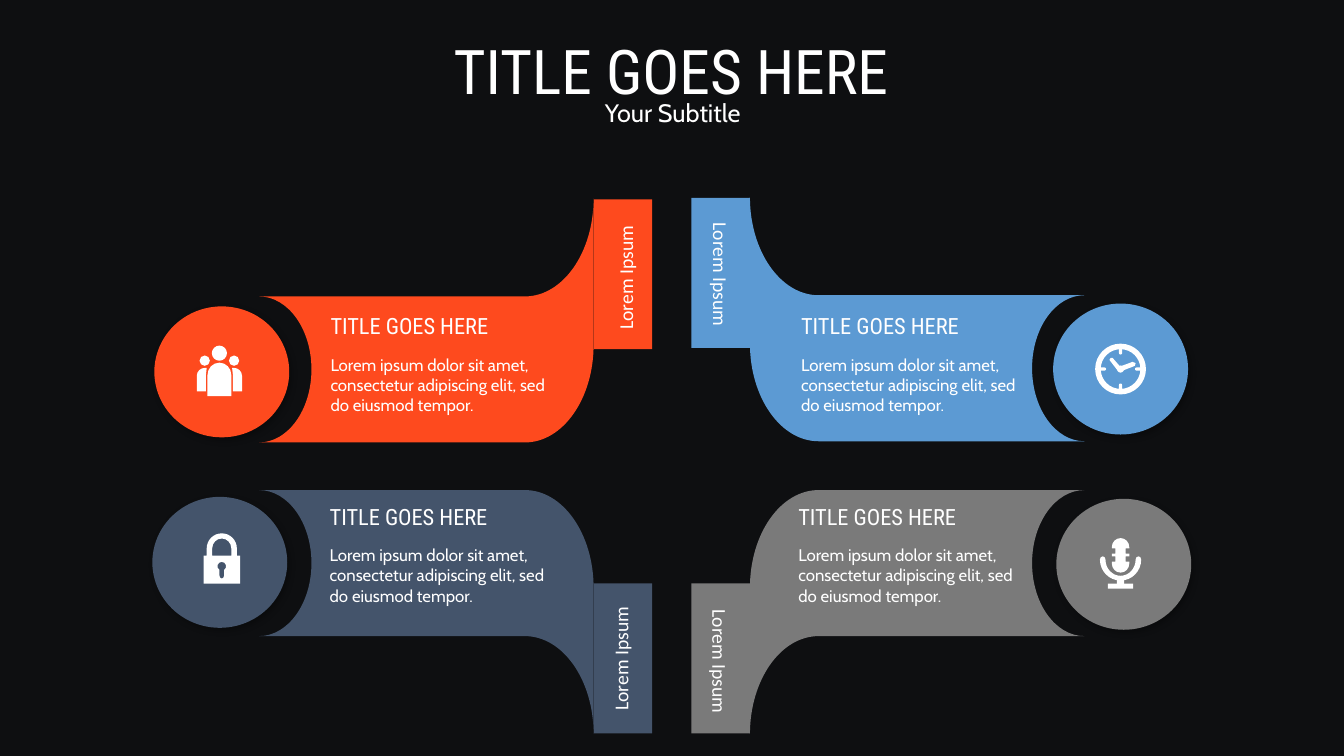
"""Build a dark slide with four mirrored, icon-tipped arms around its centre."""
from dataclasses import dataclass
from math import ceil, cos, radians, sin, tan

from lxml import etree
from pptx import Presentation
from pptx import util as u
from pptx.dml.color import RGBColor
from pptx.enum import shapes, text
from pptx.oxml.ns import qn

Point = tuple[float, float]
Contour = list[tuple]

COLOURS = {"night": "0E0F11", "white": "FFFFFF", "orange": "FE4A1E",
           "blue": "5C9AD3", "navy": "44546B", "grey": "7A7A7A"}
HEADING, BODY, TAB = "Roboto Condensed", "Cabin", "Calibri"
AXIS_X, AXIS_Y = 16.93, 11.75
RECT, OVAL = shapes.MSO_SHAPE.RECTANGLE, shapes.MSO_SHAPE.OVAL
PILL = shapes.MSO_SHAPE.ROUNDED_RECTANGLE


@dataclass
class Line:
    words: str
    font: str
    size: int
    align: text.PP_ALIGN = text.PP_ALIGN.LEFT
    before: int = 0


@dataclass
class Arm:
    colour: str
    side: int
    tier: int
    axis_y: float
    disc: Point
    card: Point
    label: Point


ARMS = [
    Arm("orange", -1, -1, AXIS_Y, (5.59, 9.37), (8.33, 7.87), (15.77, 6.96)),
    Arm("navy", -1, 1, AXIS_Y, (5.54, 14.17), (8.31, 12.67), (15.65, 16.56)),
    Arm("blue", 1, -1, AXIS_Y - 0.03, (28.24, 9.3), (20.19, 7.87), (18.16, 6.96)),
    Arm("grey", 1, 1, AXIS_Y, (28.32, 14.22), (20.12, 12.67), (18.14, 16.71)),
]
deck = Presentation()
deck.slide_width, deck.slide_height = u.Cm(33.87), u.Cm(19.05)
slide = deck.slides.add_slide(deck.slide_layouts[6])


def rgb(colour: str) -> RGBColor:
    return RGBColor.from_string(COLOURS[colour])


def paint(shape, colour: str) -> None:
    shape.shadow.inherit = False
    shape.fill.solid()
    shape.fill.fore_color.rgb = rgb(colour)
    shape.line.fill.background()


def add_block(kind, centre: Point, width: float, height: float, colour: str, turn: int = 0):
    block = slide.shapes.add_shape(
        kind, u.Cm(centre[0] - width / 2), u.Cm(centre[1] - height / 2), u.Cm(width), u.Cm(height))
    block.rotation = turn
    paint(block, colour)
    return block


def add_outline(contours: list[Contour], colour: str, origin: Point) -> None:
    placed = [[(u.Cm(origin[0] + p[0]), u.Cm(origin[1] + p[1])) for p in c] for c in contours]
    builder = slide.shapes.build_freeform(*placed[0][0])
    for index, contour in enumerate(placed):
        if index:
            builder.move_to(*contour[0])
        builder.add_line_segments(contour[1:], close=True)
    outline = builder.convert_to_shape()
    paint(outline, colour)
    segments = list(outline.element.iter(qn("a:lnTo")))
    handles = [len(p) == 3 for c in contours for p in c[1:]]
    for i, segment in enumerate(segments):
        if handles[i] and not (i and handles[i - 1]):
            segment.tag = qn("a:cubicBezTo")
            for following in segments[i + 1:i + 3]:
                segment.append(following[0])
                segment.getparent().remove(following)


def add_text(corner: Point, width: float, height: float, lines: list[Line],
             inset: bool = True, wrap: bool = True):
    box = slide.shapes.add_textbox(u.Cm(corner[0]), u.Cm(corner[1]), u.Cm(width), u.Cm(height))
    frame = box.text_frame
    frame.word_wrap = wrap
    if not inset:
        frame.margin_left = frame.margin_right = frame.margin_top = frame.margin_bottom = 0
    for index, line in enumerate(lines):
        paragraph = frame.add_paragraph() if index else frame.paragraphs[0]
        paragraph.text, paragraph.alignment = line.words, line.align
        if line.before:
            paragraph.space_before = u.Pt(line.before)
        paragraph.font.name, paragraph.font.size = line.font, u.Pt(line.size)
        paragraph.font.color.rgb = rgb("white")
    return box


def arc(x: float, y: float, rx: float, ry: float, start: int, end: int) -> Contour:
    pieces = ceil(abs(end - start) / 90)
    step = radians(end - start) / pieces
    pull = 4 / 3 * tan(step / 4)
    nodes = [(x + rx * cos(radians(start)), y + ry * sin(radians(start)))]
    for piece in range(pieces):
        a = radians(start) + piece * step
        b = a + step
        nodes += [(x + rx * (cos(a) - pull * sin(a)), y + ry * (sin(a) + pull * cos(a)), True),
                  (x + rx * (cos(b) + pull * sin(b)), y + ry * (sin(b) - pull * cos(b)), True),
                  (x + rx * cos(b), y + ry * sin(b))]
    return nodes


def circle(x: float, y: float, r: float) -> Contour:
    return arc(x, y, r, r, 0, 360)


def mirror(contour: Contour) -> Contour:
    return [(-x, *rest) for x, *rest in reversed(contour)]


def add_disc(arm: Arm) -> None:
    disc = add_block(OVAL, arm.disc, 3.3, 3.4, arm.colour, 90 * arm.side)
    effects = disc.element.spPr.find(qn("a:effectLst"))
    shadow = etree.SubElement(effects, qn("a:outerShdw"), blurRad="57150", dist="33020",
                              dir="3180000", algn="tl", rotWithShape="0")
    black = etree.SubElement(shadow, qn("a:srgbClr"), val="000000")
    etree.SubElement(black, qn("a:alpha"), val="30000")


def add_arm(arm: Arm) -> None:
    outline = (arc(3.7, 3.06, 1.73, 2.46, 180, 270) + arc(10.4, 2.44, 1.32, 1.84, 270, 90)
               + arc(3.7, 6.75, 1.73, 2.47, 270, 180))
    add_outline([[(arm.side * x, arm.tier * y, *handle) for x, y, *handle in outline]],
                arm.colour, (AXIS_X, arm.axis_y))
    add_block(RECT, (AXIS_X + arm.side * 1.23, arm.axis_y + arm.tier * 4.84),
              3.78, 1.47, arm.colour, 90 * arm.side)
    card = add_text(arm.card, 5.59, 2.64, [
        Line("TITLE GOES HERE", HEADING, 16),
        Line("Lorem ipsum dolor sit amet, consectetur adipiscing elit, sed do eiusmod tempor.",
             BODY, 12, before=11)], inset=False)
    x, y = arm.label
    label = add_text((x - 1.6, y - 0.43), 3.2, 0.86, [Line("Lorem Ipsum", TAB, 14)], wrap=False)
    label.rotation = 90 * arm.side
    for box in (card, label):
        paint(box, arm.colour)


def add_people(centre: Point) -> None:
    person = [(0.57, 0.51), (0.34, 0.51), (0.34, 0.1), (0.32, -0.08)]
    person += arc(0.36, 0.12, 0.21, 0.2, 270, 360)
    torso = [(0.3, 0.63), (-0.3, 0.63)] + arc(0, 0.1, 0.3, 0.31, 180, 360)
    add_outline([circle(0, -0.45, 0.19), circle(-0.37, -0.26, 0.13), circle(0.37, -0.26, 0.13),
                 torso, person, mirror(person)], "white", centre)


def add_lock(centre: Point) -> None:
    body = [(0.38, -0.07), (0.46, -0.07), (0.46, 0.64), (-0.46, 0.64), (-0.46, -0.07),
            (-0.38, -0.07)] + arc(0, -0.25, 0.38, 0.38, 180, 360)
    opening = [(0.24, -0.07), (-0.24, -0.07)] + arc(0, -0.25, 0.24, 0.25, 180, 360)
    keyhole = arc(0, 0.2, 0.11, 0.11, 123, 417) + arc(0, 0.43, 0.06, 0.08, 0, 180)
    add_outline([body, opening, keyhole], "white", centre)


def add_clock(x: float, y: float) -> None:
    hour = [(0, -0.05), (-0.08, 0.03), (-0.28, -0.23), (-0.25, -0.28), (-0.2, -0.28)]
    minute = [(0.08, 0.03), (0.03, -0.08), (0.3, -0.18), (0.38, -0.15), (0.36, -0.08)]
    for contours in ([hour], [minute], [circle(0, 0, 0.64), circle(0, 0, 0.5)]):
        add_outline(contours, "white", (x, y))
    add_block(OVAL, (x, y), 0.18, 0.18, "white")
    for dx, dy in ((0, 0.49), (0, -0.49), (0.49, 0), (-0.49, 0)):
        width, height = (0.25, 0.08) if dx else (0.08, 0.25)
        add_block(PILL, (x + dx, y + dy), width, height, "white").adjustments[0] = 0.5


def add_microphone(x: float, y: float) -> None:
    cradle = (arc(0, -0.09, 0.52, 0.53, 0, 180) + arc(-0.45, -0.09, 0.07, 0.08, 180, 360)
              + arc(0, -0.09, 0.38, 0.41, 180, 0) + arc(0.45, -0.09, 0.07, 0.08, 180, 360))
    notches = [(across, top + drop) for top in (-0.37, -0.17)
               for across, drop in ((0.22, 0), (0.13, 0), (0.13, 0.13), (0.22, 0.13))]
    capsule = (arc(0, -0.4, 0.22, 0.23, 180, 360) + notches
               + arc(0, 0.01, 0.22, 0.23, 0, 180) + mirror(notches))
    for contour in (cradle, capsule):
        add_outline([contour], "white", (x, y))
    add_block(RECT, (x, y + 0.48), 0.18, 0.18, "white")
    add_block(RECT, (x, y + 0.58), 0.64, 0.13, "white")


slide.background.fill.solid()
slide.background.fill.fore_color.rgb = rgb("night")
for panel in ARMS:
    add_disc(panel)
add_text((9.27, 0.71), 15.29, 2.13, [Line("TITLE GOES HERE", HEADING, 44, text.PP_ALIGN.CENTER)])
add_text((11.2, 2.34), 11.51, 1.02, [Line("Your Subtitle", BODY, 18, text.PP_ALIGN.CENTER)])
for panel in ARMS:
    add_arm(panel)
add_people((5.53, 9.35))
add_lock((5.59, 14.07))
add_clock(28.24, 9.3)
add_microphone(28.24, 14.19)
deck.save("out.pptx")
